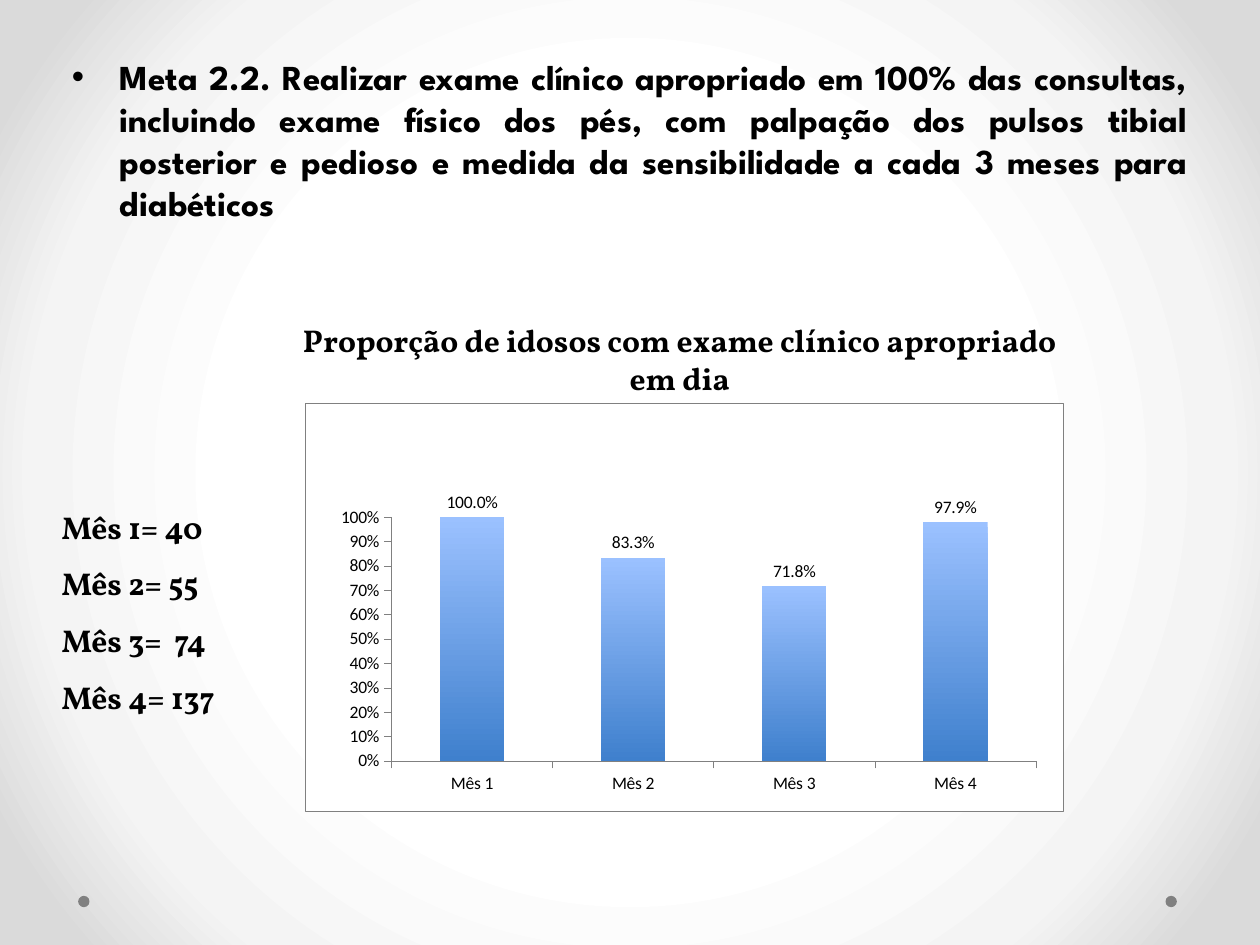
from lxml import etree
from pptx import Presentation
from pptx.chart.data import CategoryChartData
from pptx.dml.color import RGBColor
from pptx.enum.chart import XL_CHART_TYPE as ChartType, XL_LABEL_POSITION as LabelPosition, XL_TICK_MARK as TickMark
from pptx.enum.shapes import MSO_SHAPE as Shape
from pptx.enum.text import MSO_AUTO_SIZE as AutoSize, MSO_ANCHOR as Anchor, PP_ALIGN as Align
from pptx.oxml import parse_xml
from pptx.oxml.ns import nsdecls, qn
from pptx.util import Inches, Pt

COLUMNS, ROWS = 100, 75
BLACK, WHITE, GRAY = "000000", "FFFFFF", "808080"
HEADING_FONT, BODY_FONT, CHART_FONT = "League Spartan", "Vollkorn", "Calibri"

GOAL = (
    "Meta 2.2. Realizar exame clínico apropriado em 100% das consultas, "
    "incluindo exame físico dos pés, com palpação dos pulsos tibial posterior "
    "e pedioso e medida da sensibilidade a cada 3 meses para diabéticos"
)
CHART_TITLE = "Proporção de idosos com exame clínico apropriado em dia"
COUNTS = ["Mês 1= 40", "Mês 2= 55", "Mês 3=  74", "Mês 4= 137"]
SHARES = {"Mês 1": 1, "Mês 2": 0.833, "Mês 3": 0.718, "Mês 4": 0.979}


def color(hex_value):
    return RGBColor.from_string(hex_value)


def set_font(font, name, size, bold=False):
    font.name, font.size, font.bold = name, Pt(size), bold
    font.color.rgb = color(BLACK)


def area_format(border=None):
    line = f'<a:solidFill><a:srgbClr val="{border}"/></a:solidFill>' if border else "<a:noFill/>"
    return parse_xml(
        f'<c:spPr {nsdecls("c", "a")}><a:solidFill><a:srgbClr val="{WHITE}"/></a:solidFill>'
        f'<a:ln w="{Pt(0.25)}">{line}</a:ln></c:spPr>'
    )


def inner_layout(**fractions):
    modes = "".join(f'<c:{side}Mode val="edge"/>' for side in "xy")
    sizes = "".join(f'<c:{side} val="{share}"/>' for side, share in fractions.items())
    return parse_xml(
        f'<c:layout {nsdecls("c")}><c:manualLayout><c:layoutTarget val="inner"/>'
        f"{modes}{sizes}</c:manualLayout></c:layout>"
    )


class SlideBuilder:
    def __init__(self, deck):
        self.column = deck.slide_width / COLUMNS
        self.row = deck.slide_height / ROWS
        self.slide = deck.slides.add_slide(deck.slide_layouts[1])
        title = self.slide.shapes.title
        title.element.getparent().remove(title.element)

    def area(self, left, top, width, height):
        return (
            round(left * self.column),
            round(top * self.row),
            round(width * self.column),
            round(height * self.row),
        )

    def radial_background(self, stops):
        fill = self.slide.background.fill
        fill.gradient()
        gradient = self.slide.background._cSld.find(".//" + qn("a:gradFill"))
        for child in list(gradient):
            gradient.remove(child)
        stop_list = etree.SubElement(gradient, qn("a:gsLst"))
        for position, hex_value in stops:
            stop = etree.SubElement(stop_list, qn("a:gs"), pos=str(position * 1000))
            etree.SubElement(stop, qn("a:srgbClr"), val=hex_value)
        circle = etree.SubElement(gradient, qn("a:path"), {"path": "circle"})
        etree.SubElement(circle, qn("a:fillToRect"), {side: "50000" for side in "ltrb"})

    def dot(self, left, top, size):
        dot = self.slide.shapes.add_shape(Shape.OVAL, *self.area(left, top, size, size))
        dot.shadow.inherit = False
        dot.fill.solid()
        dot.fill.fore_color.rgb = color(GRAY)
        dot.line.fill.background()

    def goal(self, text, *cells):
        body = self.slide.placeholders[1]
        body.left, body.top, body.width, body.height = self.area(*cells)
        frame = body.text_frame
        frame.auto_size = AutoSize.NONE
        frame.vertical_anchor = Anchor.TOP
        para = frame.paragraphs[0]
        para.text = text
        para.alignment = Align.JUSTIFY
        properties = para._p.get_or_add_pPr()
        properties.set("marL", str(Inches(0.38)))
        properties.set("indent", str(Inches(-0.38)))
        set_font(para.font, HEADING_FONT, 20, bold=True)

    def text(self, lines, *cells, alignment=Align.LEFT, spacing=1.0):
        frame = self.slide.shapes.add_textbox(*self.area(*cells)).text_frame
        frame.word_wrap = True
        frame.auto_size = AutoSize.SHAPE_TO_FIT_TEXT
        frame.text = "\n".join(lines)
        for para in frame.paragraphs:
            para.alignment = alignment
            para.line_spacing = spacing
            set_font(para.font, BODY_FONT, 18, bold=True)

    def column_chart(self, shares, *cells):
        chart_data = CategoryChartData(number_format="0.0%")
        chart_data.categories = list(shares)
        chart_data.add_series("Series 1", list(shares.values()))
        chart = self.slide.shapes.add_chart(
            ChartType.COLUMN_CLUSTERED, *self.area(*cells), chart_data
        ).chart
        chart.has_legend = chart.has_title = False
        set_font(chart.font, CHART_FONT, 10)
        self.chart_areas(chart)
        self.chart_axes(chart)
        self.chart_columns(chart.plots[0])

    def chart_areas(self, chart):
        space = chart._chartSpace
        space.find(qn("c:chart")).addnext(area_format(GRAY))
        plot_area = space.find(".//" + qn("c:plotArea"))
        for layout in plot_area.findall(qn("c:layout")):
            plot_area.remove(layout)
        plot_area.insert(0, inner_layout(x=0.114, y=0.279, w=0.85, h=0.598))
        plot_area.append(area_format())

    def chart_axes(self, chart):
        for axis in (chart.category_axis, chart.value_axis):
            axis.has_major_gridlines = False
            axis.major_tick_mark = TickMark.OUTSIDE
            axis.minor_tick_mark = TickMark.NONE
            axis.format.line.color.rgb = color(GRAY)
            axis.format.line.width = Pt(0.25)
            set_font(axis.tick_labels.font, CHART_FONT, 10)
        values = chart.value_axis
        values.minimum_scale, values.maximum_scale, values.major_unit = 0, 1, 0.1
        values.tick_labels.number_format = "0%"
        values.tick_labels.number_format_is_linked = False

    def chart_columns(self, plot):
        plot.gap_width = 150
        plot.vary_by_categories = False
        fill = plot.series[0].format.fill
        fill.gradient()
        fill.gradient_angle = 270
        for stop, position, shade in zip(fill.gradient_stops, (0, 1), ("9BC1FF", "3F80CD")):
            stop.position, stop.color.rgb = position, color(shade)
        plot.has_data_labels = True
        labels = plot.data_labels
        labels.show_value = True
        labels.number_format = "0.0%"
        labels.number_format_is_linked = False
        labels.position = LabelPosition.OUTSIDE_END
        set_font(labels.font, CHART_FONT, 10)


def main():
    deck = Presentation()
    deck.slide_width, deck.slide_height = Inches(10), Inches(7.5)
    builder = SlideBuilder(deck)
    builder.radial_background([(50, "FFFFFF"), (76, "F4F4F4"), (92, "DADADA")])
    for left in (92.5, 6.2):
        builder.dot(left, 71.1, 0.9)
    builder.goal(GOAL, 4.7, 3.9, 90.6, 15.6)
    builder.column_chart(SHARES, 24.2, 32, 60.2, 32.4)
    builder.text([CHART_TITLE], 22.7, 25, 62.5, 10.1, alignment=Align.CENTER)
    builder.text(COUNTS, 3.9, 38.3, 18, 19.2, spacing=1.5)
    deck.save("out.pptx")


if __name__ == "__main__":
    main()
